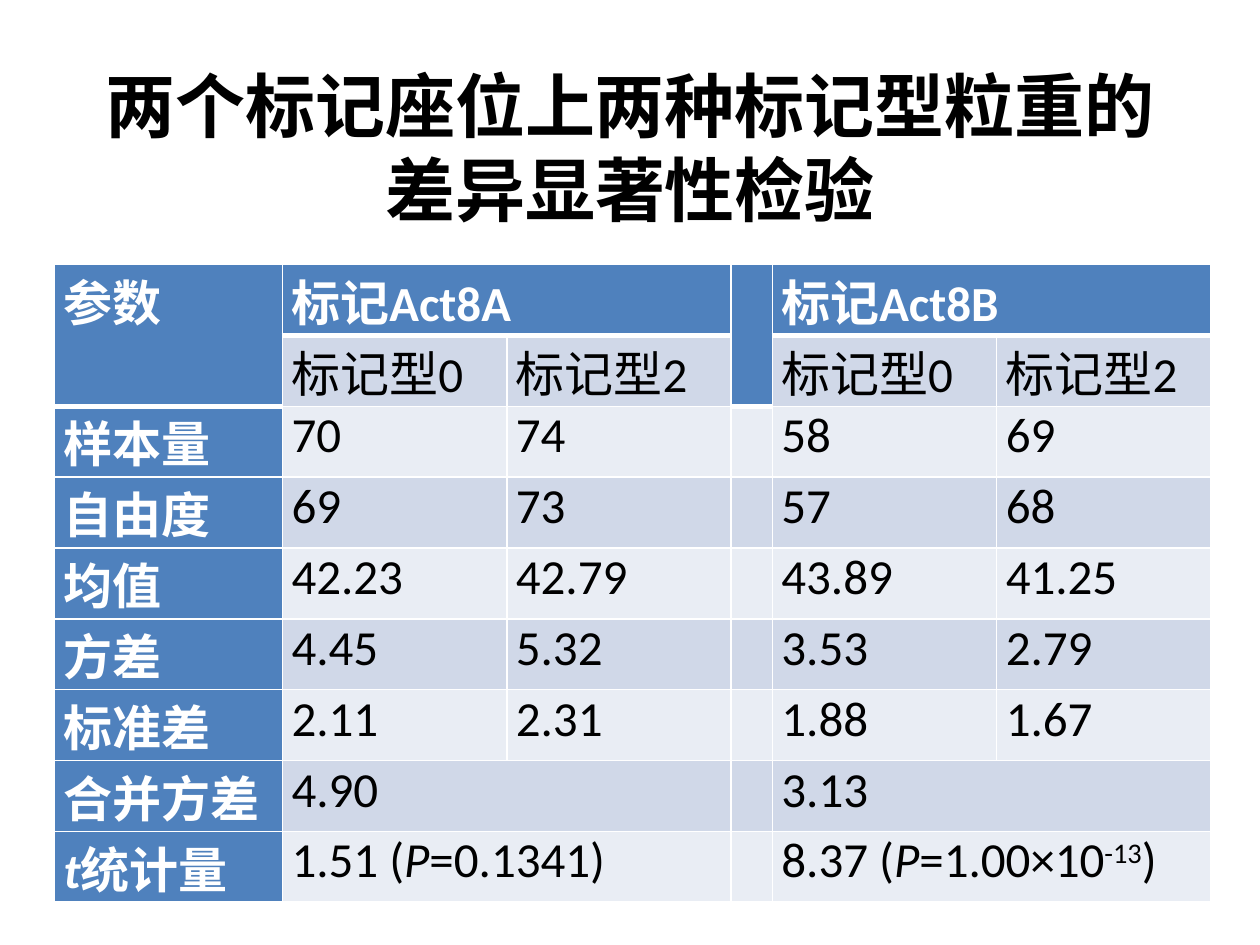
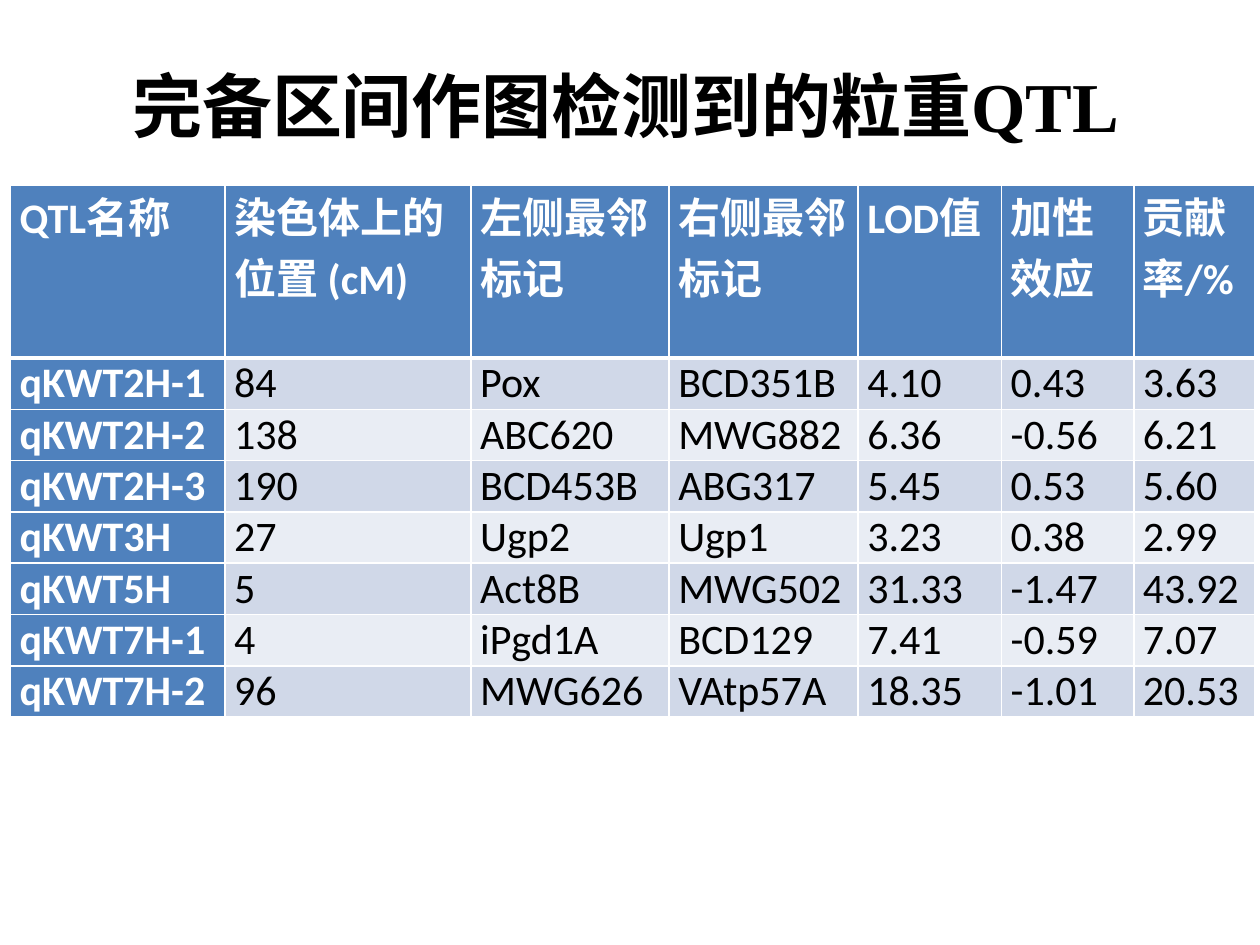
from dataclasses import dataclass

from lxml import etree
from pptx import Presentation
from pptx.dml.color import RGBColor
from pptx.enum.text import MSO_ANCHOR, PP_ALIGN
from pptx.oxml.ns import qn
from pptx.util import Pt

CENTER, LEFT, JUSTIFY = PP_ALIGN.CENTER, PP_ALIGN.LEFT, PP_ALIGN.JUSTIFY
MIDDLE, TOP = MSO_ANCHOR.MIDDLE, MSO_ANCHOR.TOP
TITLE_ONLY = 5


@dataclass(frozen=True)
class Theme:
    header: str = "4F81BD"
    bands: tuple = ("E9EDF4", "D0D8E8")
    white: str = "FFFFFF"
    black: str = "000000"
    title_font: str = "Times New Roman"
    body_font: str = "Calibri"
    title_size: float = 40
    test_size: float = 28
    locus_size: float = 24
    side_inset: float = 5.2
    thin: float = 1
    thick: float = 3


THEME = Theme()

# Grain weight test: None marks a cell covered by a merge or left empty
TEST_WIDTHS = (130.2, 128.2, 128.2, 23.6, 128.2, 122.4)
TEST_HEIGHTS = (40.4,) * 9
TEST_ROWS = [
    ["参数", "标记Act8A", None, None, "标记Act8B", None],
    [None, "标记型0", "标记型2", None, "标记型0", "标记型2"],
    ["样本量", "70", "74", None, "58", "69"],
    ["自由度", "69", "73", None, "57", "68"],
    ["均值", "42.23", "42.79", None, "43.89", "41.25"],
    ["方差", "4.45", "5.32", None, "3.53", "2.79"],
    ["标准差", "2.11", "2.31", None, "1.88", "1.67"],
    ["合并方差", "4.90", None, None, "3.13", None],
    [[("t", "italic"), ("统计量", "")],
     [("1.51 (", ""), ("P", "italic"), ("=0.1341)", "")], None, None,
     [("8.37 (", ""), ("P", "italic"), ("=1.00×10", ""),
      ("-13", "superscript"), (")", "")], None],
]
# Each merge: first row, first column, last row, last column
TEST_MERGES = [(0, column, 1, column) for column in (0, 3)] + [
    (row, column, row, column + 1) for row in (0, 7, 8) for column in (1, 4)]

# Detected loci
LOCUS_WIDTHS = (122.6, 140.6, 113.2, 108, 82, 75.6, 69.2)
LOCUS_HEIGHTS = (98.8,) + (29.3,) * 7
LOCUS_ROWS = [
    ["QTL名称", "染色体上的位置 (cM)", "左侧最邻标记", "右侧最邻标记",
     "LOD值", "加性效应", "贡献率/%"],
    ["qKWT2H-1", "84", "Pox", "BCD351B", "4.10", "0.43", "3.63"],
    ["qKWT2H-2", "138", "ABC620", "MWG882", "6.36", "-0.56", "6.21"],
    ["qKWT2H-3", "190", "BCD453B", "ABG317", "5.45", "0.53", "5.60"],
    ["qKWT3H", "27", "Ugp2", "Ugp1", "3.23", "0.38", "2.99"],
    ["qKWT5H", "5", "Act8B", "MWG502", "31.33", "-1.47", "43.92"],
    ["qKWT7H-1", "4", "iPgd1A", "BCD129", "7.41", "-0.59", "7.07"],
    ["qKWT7H-2", "96", "MWG626", "VAtp57A", "18.35", "-1.01", "20.53"],
]


def write_text(frame, content, *, font, size, color, bold, align, anchor):
    """Write a string, or a list of (text, style) spans, as one paragraph."""
    frame.word_wrap = True
    frame.vertical_anchor = anchor
    para = frame.paragraphs[0]
    para.alignment = align
    spans = [(content, "")] if isinstance(content, str) else content
    for text, style in spans:
        span = para.add_run()
        span.text = text
        span.font.name = font
        span.font.size = Pt(size)
        span.font.bold = bold
        span.font.italic = style == "italic"
        span.font.color.rgb = RGBColor.from_string(color)
        if style == "superscript":
            span.font._element.set("baseline", "30000")


def outline_header(cell):
    """Draw white borders, with a heavier one below."""
    properties = cell._tc.get_or_add_tcPr()
    widths = (THEME.thin, THEME.thin, THEME.thin, THEME.thick)
    for index, (side, width) in enumerate(zip("LRTB", widths)):
        line = etree.Element(qn(f"a:ln{side}"), w=str(Pt(width)))
        fill = etree.SubElement(line, qn("a:solidFill"))
        etree.SubElement(fill, qn("a:srgbClr"), val=THEME.white)
        properties.insert(index, line)


def add_title(page, text, box):
    title = page.shapes.title
    title.left, title.top, title.width, title.height = map(Pt, box)
    write_text(title.text_frame, text, font=THEME.title_font,
               size=THEME.title_size, color=THEME.black, bold=True,
               align=CENTER, anchor=MIDDLE)


def add_data_table(page, rows, corner, widths, heights, *, size, align,
                   merges=()):
    left, top = corner
    table = page.shapes.add_table(
        len(rows), len(widths), Pt(left), Pt(top),
        Pt(sum(widths)), Pt(sum(heights))).table
    table.first_col = True
    for column, width in zip(table.columns, widths):
        column.width = Pt(width)
    for row, height in zip(table.rows, heights):
        row.height = Pt(height)

    for row_index, row in enumerate(rows):
        for column_index, content in enumerate(row):
            cell = table.cell(row_index, column_index)
            is_header = row_index == 0 or column_index == 0
            cell.margin_left = cell.margin_right = Pt(THEME.side_inset)
            cell.margin_top = cell.margin_bottom = 0
            cell.fill.solid()
            cell.fill.fore_color.rgb = RGBColor.from_string(
                THEME.header if is_header else THEME.bands[row_index % 2])
            if row_index == 0:
                outline_header(cell)
            if content:
                write_text(cell.text_frame, content, font=THEME.body_font,
                           size=size, bold=is_header, anchor=TOP,
                           color=THEME.white if is_header else THEME.black,
                           align=align if row_index else LEFT)

    for first_row, first_column, last_row, last_column in merges:
        table.cell(first_row, first_column).merge(
            table.cell(last_row, last_column))


def add_page(deck):
    return deck.slides.add_slide(deck.slide_layouts[TITLE_ONLY])


def build_test_page(deck):
    page = add_page(deck)
    add_title(page, "两个标记座位上两种标记型粒重的差异显著性检验",
              (36, 27.4, 648, 112.4))
    add_data_table(page, TEST_ROWS, (31.2, 151.2), TEST_WIDTHS, TEST_HEIGHTS,
                   size=THEME.test_size, align=LEFT, merges=TEST_MERGES)


def build_locus_page(deck):
    page = add_page(deck)
    add_title(page, "完备区间作图检测到的粒重QTL", (20.2, 26, 674.6, 67.6))
    add_data_table(page, LOCUS_ROWS, (6, 105.8), LOCUS_WIDTHS, LOCUS_HEIGHTS,
                   size=THEME.locus_size, align=JUSTIFY)


def main():
    deck = Presentation()
    deck.slide_width, deck.slide_height = Pt(720), Pt(540)
    build_test_page(deck)
    build_locus_page(deck)
    deck.save("out.pptx")


if __name__ == "__main__":
    main()
